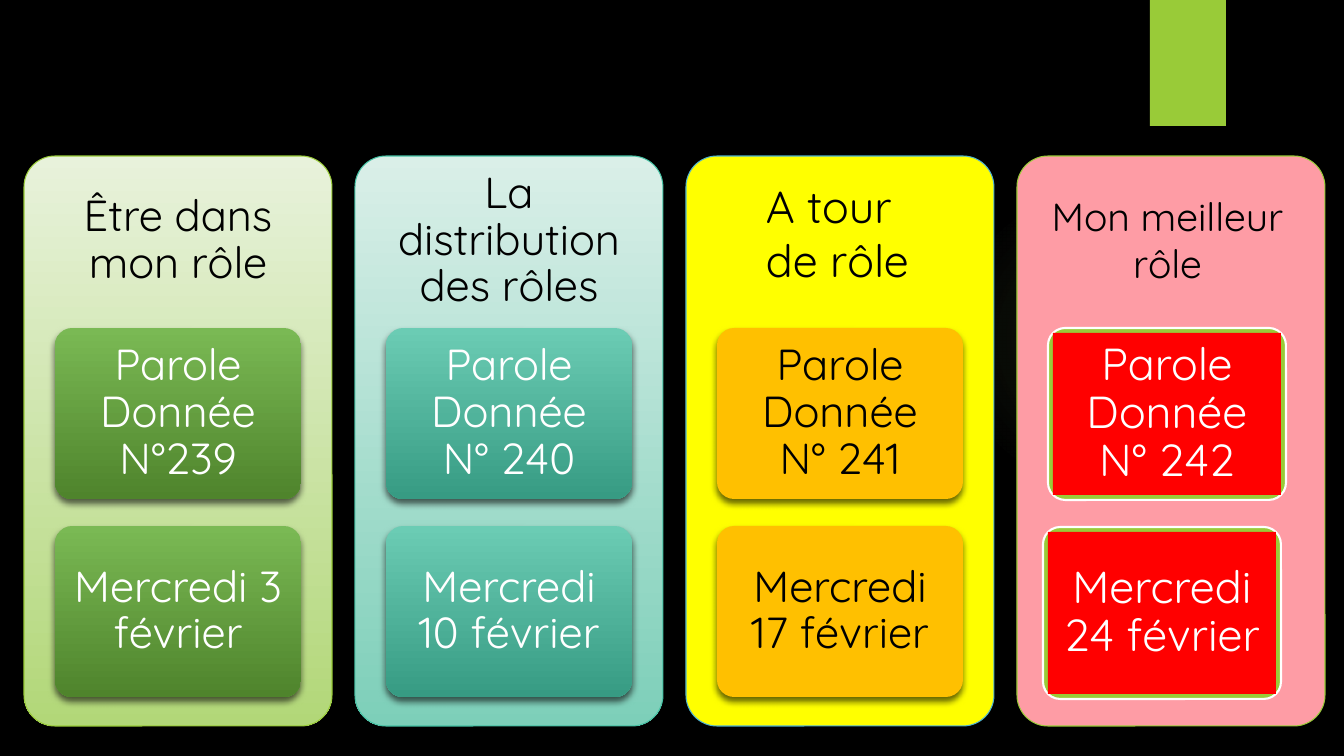
"""Build a slide of four themed columns with their issue numbers and dates."""
from lxml import etree
from pptx import Presentation
from pptx.dml.color import RGBColor
from pptx.enum.shapes import MSO_SHAPE
from pptx.enum.text import MSO_ANCHOR, PP_ALIGN
from pptx.oxml import parse_xml
from pptx.oxml.ns import nsdecls, qn
from pptx.util import Pt

PX = 12192000 / 1344
FONT = "Quicksand"
ROUNDED, RECTANGLE, OVAL = MSO_SHAPE.ROUNDED_RECTANGLE, MSO_SHAPE.RECTANGLE, MSO_SHAPE.OVAL
CENTER, LEFT = PP_ALIGN.CENTER, PP_ALIGN.LEFT
MIDDLE, TOP = MSO_ANCHOR.MIDDLE, MSO_ANCHOR.TOP
COLORS = {
    "black": "000000", "white": "FFFFFF", "lime": "99CB38", "glow": "C2E088",
    "lime_light": "E8F2DB", "lime_dark": "B2D778", "green_light": "7AB954", "green_dark": "4F842C",
    "mint_light": "DAEFE8", "mint_dark": "7DCFB9", "teal": "44C1A3",
    "teal_light": "6BCCB4", "teal_dark": "379B83",
    "yellow": "FFFF00", "blue": "4EB3CF", "amber": "FFC000", "pink": "FE9CA5", "red": "FF0000",
}


def add_box(kind, box, fills, line=None, line_width=0.75, shadow=None):
    shape = slide.shapes.add_shape(kind, *[round(value * PX) for value in box])
    if kind == ROUNDED:
        shape.adjustments[0] = 0.1
    if len(fills) == 2:
        shape.fill.gradient()
        shape.fill.gradient_angle = 270
        for stop, name in zip(shape.fill.gradient_stops, fills):
            stop.color.rgb = RGBColor.from_string(COLORS[name])
    elif fills:
        shape.fill.solid()
        shape.fill.fore_color.rgb = RGBColor.from_string(COLORS[fills[0]])
    if line:
        shape.line.color.rgb = RGBColor.from_string(COLORS[line])
        shape.line.width = Pt(line_width)
    else:
        shape.line.fill.background()
    shape.shadow.inherit = False
    if shadow:
        blur, distance, opacity = shadow
        effects = shape.element.spPr.find(qn("a:effectLst"))
        outer = etree.SubElement(effects, qn("a:outerShdw"), blurRad=str(Pt(blur)),
                                 dist=str(Pt(distance)), dir="5400000", rotWithShape="0")
        color = etree.SubElement(outer, qn("a:srgbClr"), val=COLORS["black"])
        etree.SubElement(color, qn("a:alpha"), val=str(opacity * 1000))
    return shape


def write_text(shape, lines, size, color, insets, align=CENTER, anchor=MIDDLE, spacing=0.9, wrap=True):
    frame = shape.text_frame
    frame.word_wrap = wrap
    frame.vertical_anchor = anchor
    frame.margin_left = frame.margin_right = round(insets[0] * PX)
    frame.margin_top = frame.margin_bottom = round(insets[1] * PX)
    for index, line in enumerate(lines):
        paragraph = frame.add_paragraph() if index else frame.paragraphs[0]
        paragraph.alignment = align
        paragraph.line_spacing = spacing
        run = paragraph.add_run()
        run.text = line
        run.font.name = FONT
        run.font.size = Pt(size)
        run.font.color.rgb = RGBColor.from_string(COLORS[color])


presentation = Presentation()
presentation.slide_width = round(1344 * PX)
presentation.slide_height = round(756 * PX)
slide = presentation.slides.add_slide(presentation.slide_layouts[6])
slide.background.fill.solid()
slide.background.fill.fore_color.rgb = RGBColor.from_string(COLORS["black"])

glow = add_box(OVAL, (949, 184, 310, 310), ())
stops = "".join(
    f'<a:gs pos="{position}000"><a:srgbClr val="{COLORS["glow"]}">'
    f'<a:alpha val="{opacity}000"/></a:srgbClr></a:gs>'
    for position, opacity in ((0, 7), (36, 6), (69, 0), (100, 0)))
glow.element.spPr.find(qn("a:prstGeom")).addnext(parse_xml(
    f'<a:gradFill {nsdecls("a")}><a:gsLst>{stops}</a:gsLst><a:path path="circle">'
    '<a:fillToRect l="50000" t="50000" r="50000" b="50000"/></a:path></a:gradFill>'))
add_box(RECTANGLE, (1150, 0, 76, 126), ("lime",), shadow=(3, 2, 45))

columns = [
    (("lime_light", "lime_dark"), "lime", ("green_light", "green_dark"), "white",
     ("Parole Donnée N°239", "Mercredi 3 février")),
    (("mint_light", "mint_dark"), "teal", ("teal_light", "teal_dark"), "white",
     ("Parole Donnée N° 240", "Mercredi 10 février")),
    (("yellow",), "blue", ("amber",), "black",
     ("Parole Donnée N° 241", "Mercredi 17 février")),
    (("pink",), "lime", (), "white", ()),
]
for column, (panel_fills, outline, card_fills, color, labels) in enumerate(columns):
    left = 24 + 331 * column
    add_box(ROUNDED, (left, 156, 308, 570), panel_fills, outline)
    for row, label in enumerate(labels):
        card = add_box(ROUNDED, (left + 31, 328 + 198 * row, 246, 171), card_fills, shadow=(5, 3, 60))
        write_text(card, [label], 31, color, (14, 11))

for left, top, label in ((1048, 328, "Parole Donnée N° 242"), (1043, 527, "Mercredi 24 février")):
    add_box(ROUNDED, (left, top, 238, 172), ("lime",), "white", 1.5)
    panel = add_box(RECTANGLE, (left + 5, top + 5, 228, 162), ("red",))
    write_text(panel, [label], 32, "white", (9, 7))

headings = [
    ((24, 156, 308, 170), ["Être dans mon rôle"], 31, (13, 13), CENTER, MIDDLE, 0.9, True),
    ((355, 156, 308, 170), ["La distribution des rôles"], 31, (13, 13), CENTER, MIDDLE, 0.9, True),
    ((756, 174, 174, 119), ["A tour", "de rôle"], 32, (10, 5), LEFT, TOP, 1.0, False),
    ((1028, 187, 279, 105), ["Mon meilleur", "rôle"], 28, (10, 5), CENTER, TOP, 1.0, True),
]
for box, lines, size, insets, align, anchor, spacing, wrap in headings:
    heading = slide.shapes.add_textbox(*[round(value * PX) for value in box])
    write_text(heading, lines, size, "black", insets, align, anchor, spacing, wrap)

presentation.save("out.pptx")
